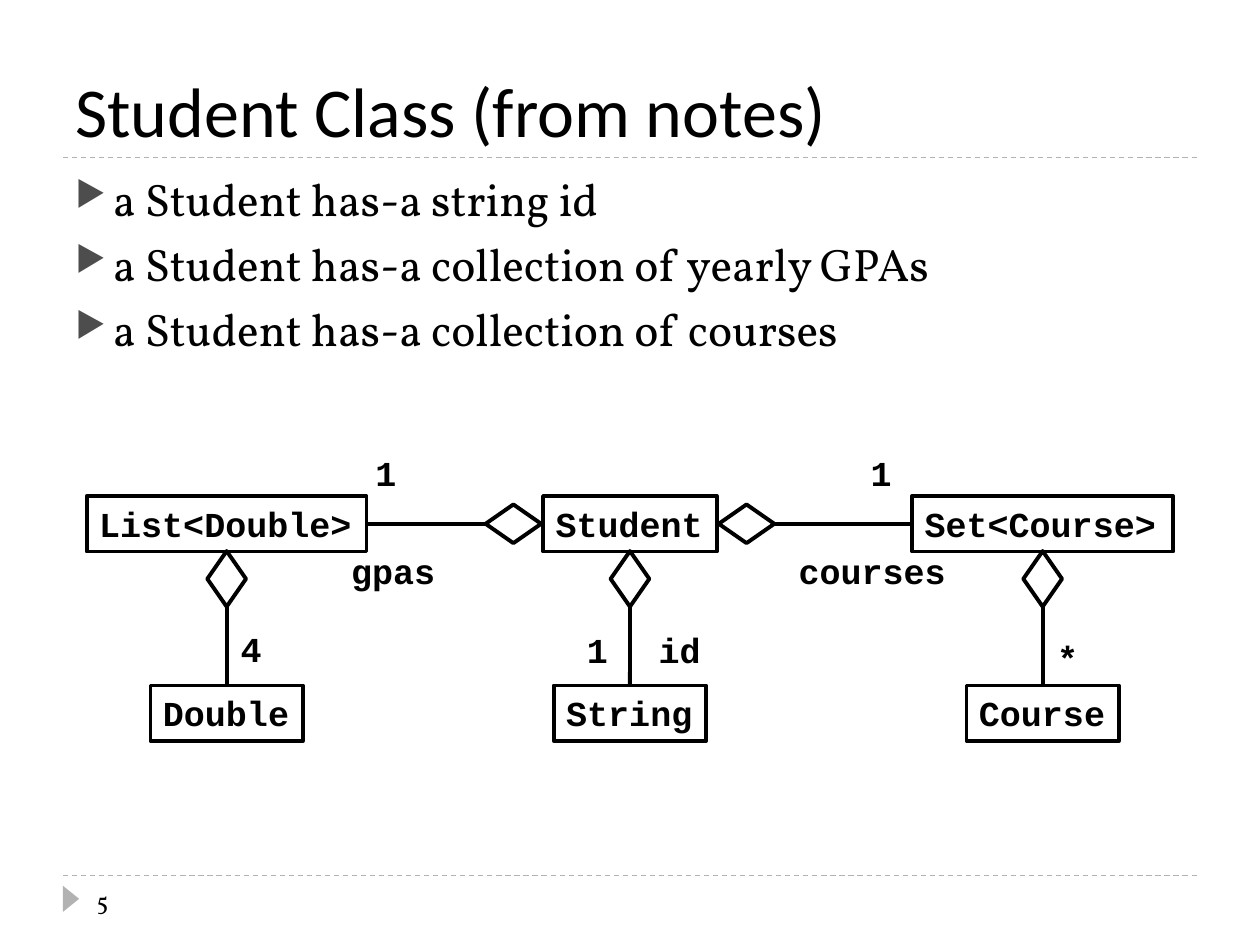
"""Builds the Student class slide with its bullets and UML aggregation diagram."""
from dataclasses import dataclass

from lxml import etree
from pptx import Presentation
from pptx.dml.color import RGBColor
from pptx.enum.dml import MSO_LINE
from pptx.enum.shapes import MSO_CONNECTOR, MSO_SHAPE
from pptx.enum.text import MSO_ANCHOR, PP_ALIGN
from pptx.oxml.ns import qn
from pptx.util import Cm, Pt

STRAIGHT = MSO_CONNECTOR.STRAIGHT
RECT, DIAMOND, TRIANGLE = MSO_SHAPE.RECTANGLE, MSO_SHAPE.DIAMOND, MSO_SHAPE.ISOSCELES_TRIANGLE
TOP, MIDDLE, BOTTOM = MSO_ANCHOR.TOP, MSO_ANCHOR.MIDDLE, MSO_ANCHOR.BOTTOM
LEFT, DASH = PP_ALIGN.LEFT, MSO_LINE.DASH
SIDE_TOP, SIDE_LEFT, SIDE_BOTTOM, SIDE_RIGHT = range(4)


@dataclass(frozen=True)
class Theme:
    ink: str = "000000"
    rule: str = "B2B2B2"
    bullet: str = "4D4D4D"
    heading_font: str = "Calibri"
    body_font: str = "Vollkorn"
    code_font: str = "Courier New"
    heading_size: float = 40
    body_size: float = 26
    code_size: float = 20
    number_size: float = 14
    rule_width: float = 0.75
    line_width: float = 2.25


class SlideBuilder:
    def __init__(self, s, theme):
        self.s, self.theme = s, theme

    def style_text(self, tf, font, size, bold=False):
        for p in tf.paragraphs:
            p.alignment = LEFT
            for r in p.runs:
                r.font.name, r.font.size, r.font.bold = font, Pt(size), bold
                r.font.color.rgb = RGBColor.from_string(self.theme.ink)

    def text(self, text, x, y, w, h, font, size, anchor=TOP):
        tf = self.s.shapes.add_textbox(Cm(x), Cm(y), Cm(w), Cm(h)).text_frame
        tf.word_wrap, tf.vertical_anchor = True, anchor
        tf.text = text
        self.style_text(tf, font, size)
        return tf

    def bullets(self, items, x, y, w, h):
        tf = self.text("\n".join(items), x, y, w, h, self.theme.body_font, self.theme.body_size)
        for p in tf.paragraphs:
            p.space_before = Pt(6)
            pPr = p._p.get_or_add_pPr()
            pPr.set("marL", str(Cm(0.76)))
            pPr.set("indent", str(Cm(-0.76)))
            color = etree.SubElement(pPr, qn("a:buClr"))
            etree.SubElement(color, qn("a:srgbClr"), val=self.theme.bullet)
            etree.SubElement(pPr, qn("a:buSzPct"), val="76000")
            etree.SubElement(pPr, qn("a:buChar"), char="▶")

    def label(self, text, x, y, w):
        tf = self.text(text, x, y, w, 1.12, self.theme.code_font, self.theme.code_size)
        tf.word_wrap = False
        self.style_text(tf, self.theme.code_font, self.theme.code_size, bold=True)

    def outline(self, kind, cx, cy, w, h):
        sp = self.s.shapes.add_shape(kind, Cm(cx - w / 2), Cm(cy - h / 2), Cm(w), Cm(h))
        sp.shadow.inherit = False
        sp.fill.background()
        sp.line.color.rgb = RGBColor.from_string(self.theme.ink)
        sp.line.width = Pt(self.theme.line_width)
        return sp

    def class_box(self, name, cx, cy, w):
        sp = self.outline(RECT, cx, cy, w, 1.12)
        tf = sp.text_frame
        tf.word_wrap, tf.vertical_anchor = False, TOP
        tf.text = name
        self.style_text(tf, self.theme.code_font, self.theme.code_size, bold=True)
        return sp

    def marker(self, cx, cy, w, h):
        sp = self.s.shapes.add_shape(TRIANGLE, Cm(cx - w / 2), Cm(cy - h / 2), Cm(w), Cm(h))
        sp.shadow.inherit = False
        sp.rotation = 90
        sp.fill.solid()
        sp.fill.fore_color.rgb = RGBColor.from_string(self.theme.rule)
        sp.line.fill.background()

    def line(self, color, width, x1=0, y1=0, x2=0, y2=0):
        c = self.s.shapes.add_connector(STRAIGHT, Cm(x1), Cm(y1), Cm(x2), Cm(y2))
        c.line.color.rgb = RGBColor.from_string(color)
        c.line.width = Pt(width)
        etree.SubElement(c._element.spPr, qn("a:effectLst"))
        return c

    def rule(self, y):
        self.line(self.theme.rule, self.theme.rule_width, 1.27, y, 24.13, y).line.dash_style = DASH

    def link(self, start, start_side, end, end_side):
        c = self.line(self.theme.ink, self.theme.line_width)
        c.begin_connect(start, start_side)
        c.end_connect(end, end_side)


def main():
    prs = Presentation()
    prs.slide_width, prs.slide_height = Cm(25.4), Cm(19.05)
    theme = Theme()
    b = SlideBuilder(prs.slides.add_slide(prs.slide_layouts[6]), theme)

    for y in (17.65, 3.18):
        b.rule(y)
    b.marker(1.43, 18.12, 0.53, 0.33)
    b.text("Student Class (from notes)", 1.27, 0.43, 22.86, 2.74,
           theme.heading_font, theme.heading_size, BOTTOM)
    b.bullets(["a Student has-a string id",
               "a Student has-a collection of yearly GPAs",
               "a Student has-a collection of courses"], 1.27, 3.33, 22.86, 13.72)
    b.text("5", 1.7, 17.65, 5.51, 1.02, theme.body_font, theme.number_size, MIDDLE)

    upper_y, diamond_y, lower_y = 10.56, 11.67, 14.38
    columns = [("List<Double>", 5.64, "Double", 4.57),
               ("Student", 3.5, "String", 12.7),
               ("Set<Course>", 5.26, "Course", 21.02)]
    owners = []
    for owner, width, part, cx in columns:
        owners.append(b.class_box(owner, cx, upper_y, width))
        diamond = b.outline(DIAMOND, cx, diamond_y, 0.78, 1.12)
        part_box = b.class_box(part, cx, lower_y, 3.07)
        b.link(diamond, SIDE_BOTTOM, part_box, SIDE_TOP)

    student_x = columns[1][3]
    for box, direction, near, far in ((owners[0], -1, SIDE_LEFT, SIDE_RIGHT),
                                      (owners[2], 1, SIDE_RIGHT, SIDE_LEFT)):
        diamond = b.outline(DIAMOND, student_x + direction * 2.35, upper_y, 1.12, 0.78)
        b.link(diamond, near, box, far)

    for text, x, y, w in (("1", 7.32, 8.97, 0.94), ("1", 17.3, 8.97, 0.94),
                          ("gpas", 6.83, 10.95, 2.24), ("courses", 15.85, 10.95, 3.51),
                          ("4", 4.6, 12.52, 0.94), ("1", 11.58, 12.55, 0.94),
                          ("id", 13.03, 12.55, 1.37), ("*", 21.06, 12.7, 0.94)):
        b.label(text, x, y, w)

    prs.save("out.pptx")


if __name__ == "__main__":
    main()
